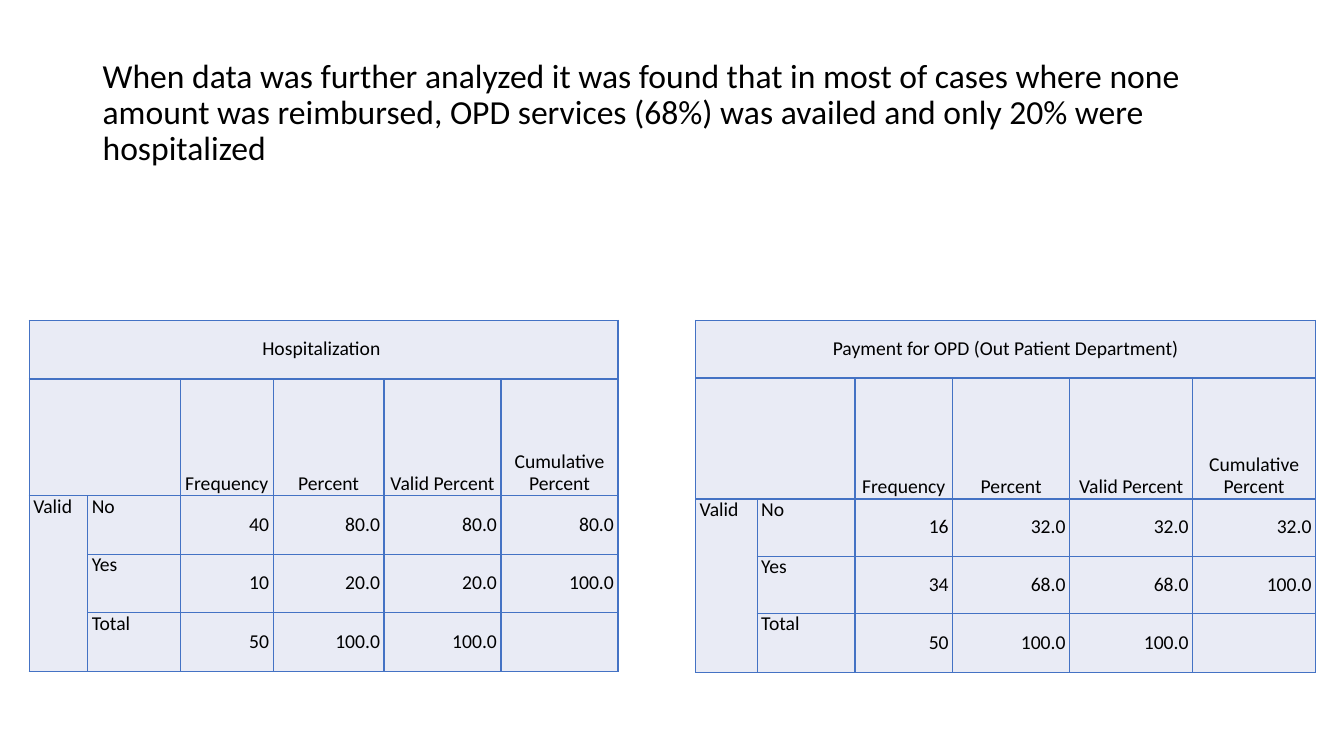
import lxml.etree
import pptx
import pptx.dml.color
import pptx.enum.text
import pptx.oxml.ns
import pptx.util

PX = 9144  # 100 px to the inch
ALIGN = pptx.enum.text.PP_ALIGN
ANCHOR = pptx.enum.text.MSO_ANCHOR
BORDER, CELL_FILL, INK = "4472C4", "E9EBF5", "000000"


def color(hex_string):
    return pptx.dml.color.RGBColor.from_string(hex_string)


def add_borders(cell):
    properties = cell._tc.get_or_add_tcPr()
    for side in ("lnL", "lnR", "lnT", "lnB"):
        line = lxml.etree.SubElement(properties, pptx.oxml.ns.qn("a:" + side), w="12700")
        fill = lxml.etree.SubElement(line, pptx.oxml.ns.qn("a:solidFill"))
        lxml.etree.SubElement(fill, pptx.oxml.ns.qn("a:srgbClr"), val=BORDER)


presentation = pptx.Presentation()
presentation.slide_width = 1333 * PX
presentation.slide_height = 750 * PX
slide = presentation.slides.add_slide(presentation.slide_layouts[6])

title = slide.shapes.add_textbox(92 * PX, 40 * PX, 1150 * PX, 145 * PX)
title.text_frame.word_wrap = True
title.text_frame.vertical_anchor = ANCHOR.MIDDLE
paragraph = title.text_frame.paragraphs[0]
paragraph.text = (
    "When data was further analyzed it was found that in most of cases where none "
    "amount was reimbursed, OPD services (68%) was availed and only 20% were hospitalized"
)
paragraph.line_spacing = 0.9
paragraph.font.size = pptx.util.Pt(24)
paragraph.font.name = "Calibri"
paragraph.font.color.rgb = color(INK)

HEADINGS = ["", "", "Frequency", "Percent", "Valid Percent", "Cumulative Percent"]
TABLES = [
    {
        "heading": "Hospitalization ",
        "left": 29,
        "columns": [58, 92, 92, 110, 116, 116],
        "rows": [58, 116, 58, 58, 58],
        "values": [
            ["Valid", "No", "40", "80.0", "80.0", "80.0"],
            ["", "Yes", "10", "20.0", "20.0", "100.0"],
            ["", "Total", "50", "100.0", "100.0", ""],
        ],
    },
    {
        "heading": "Payment for OPD (Out Patient Department)",
        "left": 690,
        "columns": [61, 97, 97, 116, 122, 122],
        "rows": [57, 120, 57, 57, 58],
        "values": [
            ["Valid", "No", "16", "32.0", "32.0", "32.0"],
            ["", "Yes", "34", "68.0", "68.0", "100.0"],
            ["", "Total", "50", "100.0", "100.0", ""],
        ],
    },
]

for data in TABLES:
    columns, rows = data["columns"], data["rows"]
    table = slide.shapes.add_table(
        len(rows), len(columns), data["left"] * PX, 318 * PX, sum(columns) * PX, sum(rows) * PX
    ).table
    table.first_row = False
    table.horz_banding = False
    for column, width in zip(table.columns, columns):
        column.width = width * PX
    for row, height in zip(table.rows, rows):
        row.height = height * PX

    table.cell(0, 0).merge(table.cell(0, 5))
    table.cell(1, 0).merge(table.cell(1, 1))
    table.cell(2, 0).merge(table.cell(4, 0))

    texts = [[data["heading"]] + [""] * 5, HEADINGS] + data["values"]
    for row_index, row_texts in enumerate(texts):
        for column_index, text in enumerate(row_texts):
            if row_index == 0:
                alignment, anchor = ALIGN.CENTER, ANCHOR.MIDDLE
            elif row_index == 1:
                alignment, anchor = ALIGN.CENTER, ANCHOR.BOTTOM
            elif column_index < 2:
                alignment, anchor = ALIGN.LEFT, ANCHOR.TOP
            else:
                alignment, anchor = ALIGN.RIGHT, ANCHOR.MIDDLE

            cell = table.cell(row_index, column_index)
            add_borders(cell)
            cell.fill.solid()
            cell.fill.fore_color.rgb = color(CELL_FILL)
            cell.margin_left = cell.margin_right = cell.margin_top = cell.margin_bottom = 0
            cell.vertical_anchor = anchor

            paragraph = cell.text_frame.paragraphs[0]
            paragraph.text = text
            paragraph.alignment = alignment
            paragraph.line_spacing = pptx.util.Pt(16)
            paragraph.font.size = pptx.util.Pt(14)
            paragraph.font.name = "Calibri"
            paragraph.font.color.rgb = color(INK)
            for margin in ("marL", "marR"):
                paragraph._p.get_or_add_pPr().set(margin, str(4 * PX))

presentation.save("out.pptx")
